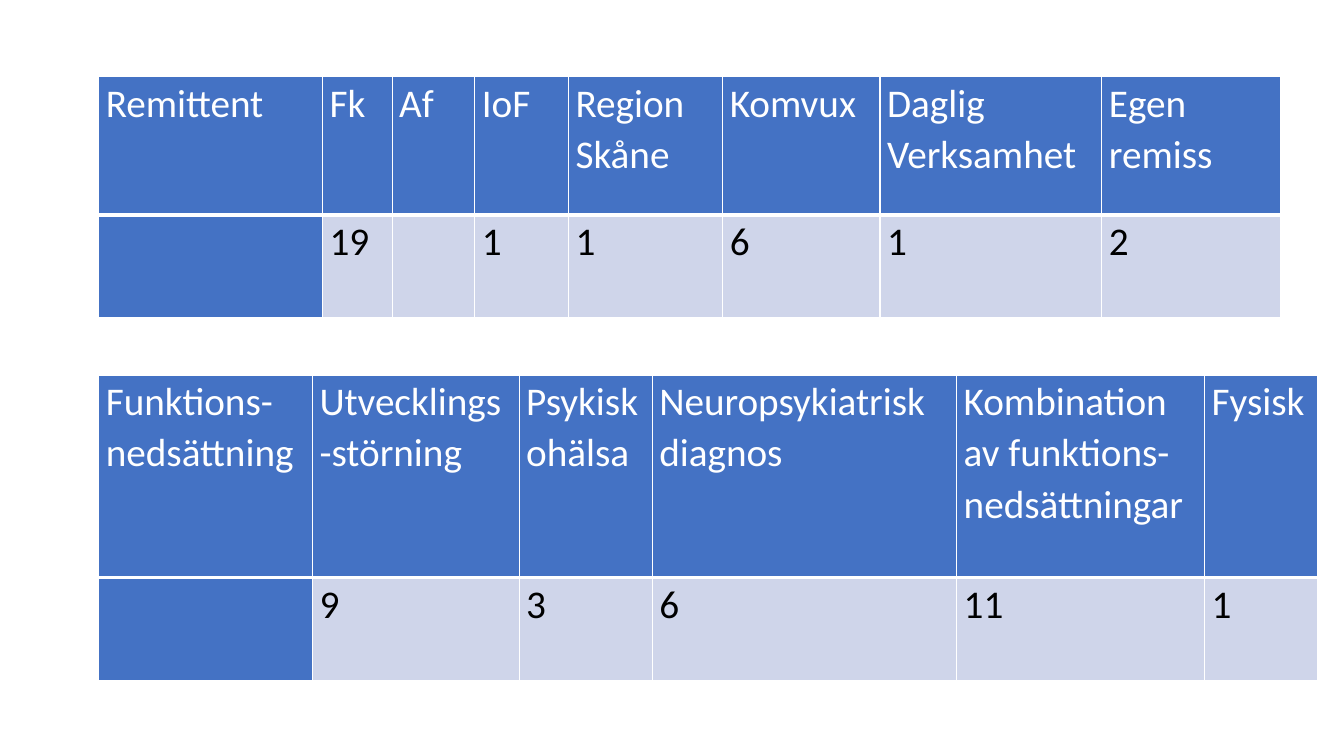
"""Builds a slide with two tables: referrers and types of disability."""
from dataclasses import dataclass

from lxml import etree
from pptx import Presentation
from pptx import util as u
from pptx.dml.color import RGBColor
from pptx.oxml.ns import qn


@dataclass(frozen=True)
class Theme:
    """Colours, type and line sizes of the slide."""
    font: str = "Calibri"
    size: float = 28
    leading: float = 1.07
    header_fill: str = "4472C4"
    value_fill: str = "CFD5EA"
    header_text: str = "FFFFFF"
    value_text: str = "000000"
    rule: str = "FFFFFF"
    thin: float = 1
    thick: float = 3


THEME = Theme()
LEFT = 0.98
INSET = 0.07

REFERRERS = {
    "Remittent": (2.22, ""),
    "Fk": (0.69, "19"),
    "Af": (0.82, ""),
    "IoF": (0.93, "1"),
    "Region Skåne": (1.53, "1"),
    "Komvux": (1.56, "6"),
    "Daglig\nVerksamhet": (2.2, "1"),
    "Egen remiss": (1.77, "2"),
}
DISABILITIES = {
    "Funktions-\nnedsättning": (2.12, ""),
    "Utvecklings-störning": (2.05, "9"),
    "Psykisk ohälsa": (1.32, "3"),
    "Neuropsykiatrisk diagnos": (3.02, "6"),
    "Kombination av funktions-nedsättningar": (2.46, "11"),
    "Fysisk": (1.12, "1"),
}


def add_borders(cell, bottom):
    """Draw thin rules round a cell, with its own bottom width in points."""
    properties = cell._tc.get_or_add_tcPr()
    for side, width in zip("LRTB", [THEME.thin] * 3 + [bottom]):
        line = etree.SubElement(properties, qn(f"a:ln{side}"), w=str(u.Pt(width)))
        fill = etree.SubElement(line, qn("a:solidFill"))
        etree.SubElement(fill, qn("a:srgbClr"), val=THEME.rule)


def fill_cell(cell, wording, fill, colour, bottom):
    """Give a cell its rules, fill and formatted wording."""
    add_borders(cell, bottom)
    cell.fill.solid()
    cell.fill.fore_color.rgb = RGBColor.from_string(fill)
    cell.margin_left = cell.margin_right = u.Inches(INSET)
    cell.margin_top = cell.margin_bottom = 0
    cell.text = wording
    for paragraph in cell.text_frame.paragraphs:
        paragraph.line_spacing = THEME.leading
        paragraph.font.name = THEME.font
        paragraph.font.size = u.Pt(THEME.size)
        paragraph.font.bold = False
        paragraph.font.color.rgb = RGBColor.from_string(colour)


def add_count_table(slide, top, row_heights, counts):
    """Add a table with a header row and header column above one row of counts."""
    width = sum(column_width for column_width, _ in counts.values())
    table = slide.shapes.add_table(
        len(row_heights), len(counts), u.Inches(LEFT), u.Inches(top),
        u.Inches(width), u.Inches(sum(row_heights))).table
    table.horz_banding = False
    table.first_col = True
    for row, height in zip(table.rows, row_heights):
        row.height = u.Inches(height)
    for index, (heading, (column_width, count)) in enumerate(counts.items()):
        table.columns[index].width = u.Inches(column_width)
        fill_cell(table.cell(0, index), heading, THEME.header_fill,
                  THEME.header_text, THEME.thick)
        fill_cell(table.cell(1, index), count,
                  THEME.value_fill if index else THEME.header_fill,
                  THEME.value_text, THEME.thin)


def main():
    """Build and save the slide."""
    deck = Presentation()
    deck.slide_width, deck.slide_height = u.Inches(13.33), u.Inches(7.5)
    slide = deck.slides.add_slide(deck.slide_layouts.get_by_name("Blank"))
    add_count_table(slide, 0.76, (1.37, 1.02), REFERRERS)
    add_count_table(slide, 3.72, (2.01, 1.02), DISABILITIES)
    deck.save("out.pptx")


if __name__ == "__main__":
    main()
